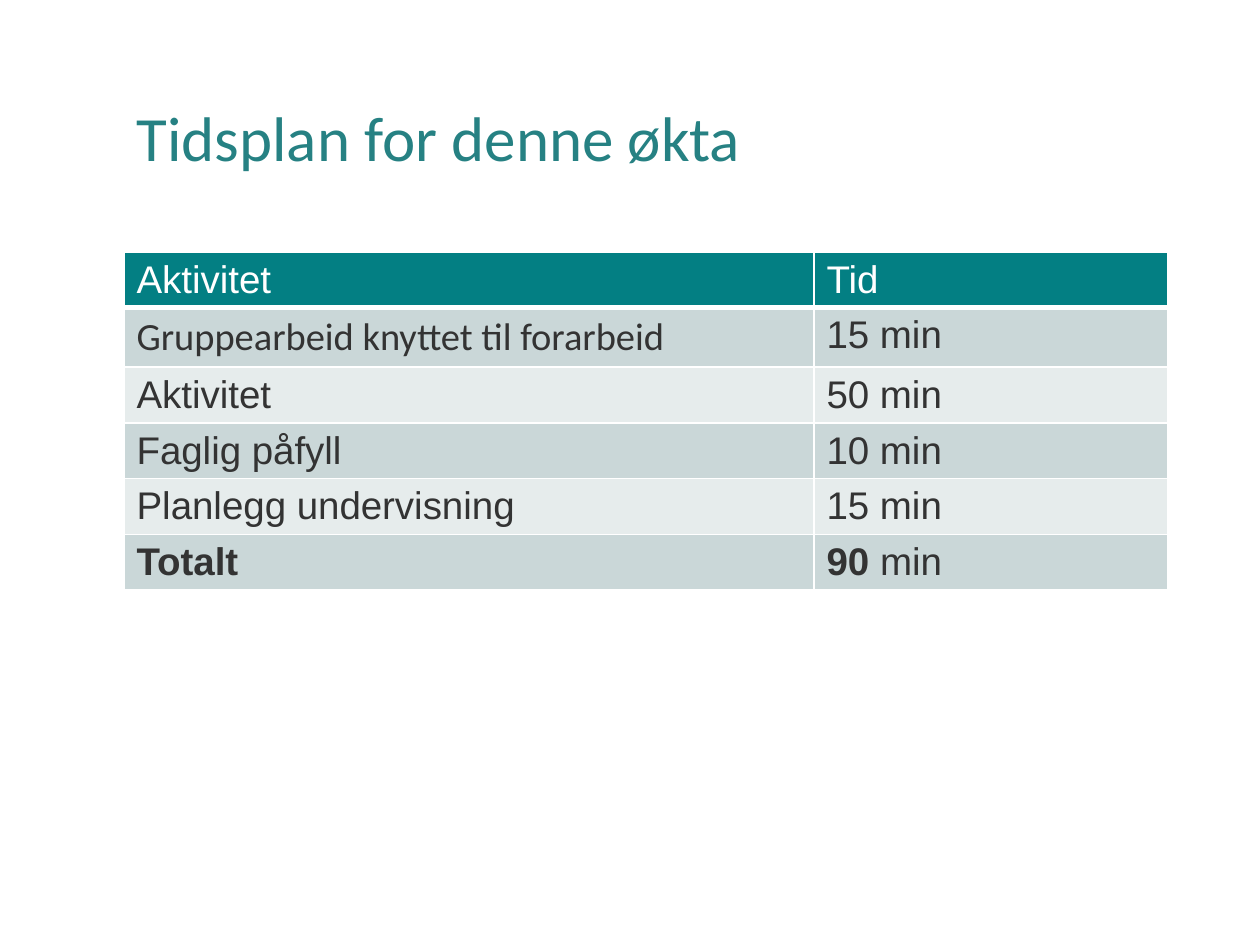
from pptx import Presentation
from pptx.dml.color import RGBColor
from pptx.enum.text import MSO_ANCHOR, PP_ALIGN
from pptx.oxml import parse_xml
from pptx.oxml.ns import nsdecls
from pptx.util import Pt

EMU_PER_PX = 914400 // 126
COLORS = {
    "title": "268183",
    "header": "037F83",
    "odd_row": "CAD7D8",
    "even_row": "E6ECEC",
    "text": "333333",
    "white": "FFFFFF",
}
HEADER = ("Aktivitet", "Tid")
SCHEDULE = [
    ("Gruppearbeid knyttet til forarbeid", "15 min"),
    ("Aktivitet", "50 min"),
    ("Faglig påfyll", "10 min"),
    ("Planlegg undervisning", "15 min"),
]
TOTAL = ("Totalt", "90", " min")
COLUMN_WIDTHS = (690, 354)
ROW_HEIGHT = 52


def px(length):
    return length * EMU_PER_PX


class SlideBuilder:
    def __init__(self, presentation):
        self.slide = presentation.slides.add_slide(presentation.slide_layouts[5])

    def add_run(self, paragraph, text, color, size=22, name="Arial", bold=False):
        run = paragraph.add_run()
        run.text = text
        formats = {"size": Pt(size), "name": name, "bold": bold}
        for attribute, value in formats.items():
            setattr(run.font, attribute, value)
        run.font.color.rgb = RGBColor.from_string(COLORS[color])

    def add_title(self, text, left, top, width, height):
        title = self.slide.shapes.title
        box = {"left": left, "top": top, "width": width, "height": height}
        for attribute, value in box.items():
            setattr(title, attribute, px(value))
        title.text_frame.vertical_anchor = MSO_ANCHOR.MIDDLE
        title.text_frame.word_wrap = True
        paragraph = title.text_frame.paragraphs[0]
        paragraph.alignment = PP_ALIGN.LEFT
        paragraph.line_spacing = 0.9
        self.add_run(paragraph, text, "title", size=36, name="Calibri")

    def add_table(self, rows, columns, left, top):
        frame = self.slide.shapes.add_table(
            rows, columns, px(left), px(top),
            px(sum(COLUMN_WIDTHS)), px(rows * ROW_HEIGHT),
        )
        for column, width in zip(frame.table.columns, COLUMN_WIDTHS):
            column.width = px(width)
        return frame.table

    def style_cell(self, cell, fill, top=1, bottom=1):
        """Give the cell white borders, with widths in points, and a fill."""
        properties = cell._tc.get_or_add_tcPr()
        for side, width in {"L": 1, "R": 1, "T": top, "B": bottom}.items():
            properties.append(parse_xml(
                f'<a:ln{side} {nsdecls("a")} w="{Pt(width)}"><a:solidFill>'
                f'<a:srgbClr val="{COLORS["white"]}"/></a:solidFill></a:ln{side}>'
            ))
        cell.fill.solid()
        cell.fill.fore_color.rgb = RGBColor.from_string(COLORS[fill])

    def add_schedule(self, left, top):
        rows = [HEADER, *SCHEDULE, TOTAL]
        table = self.add_table(len(rows), len(HEADER), left, top)
        for row, (activity, time, *unit) in enumerate(rows):
            fill = "odd_row" if row % 2 else "even_row"
            color = "text"
            if row == 0:
                fill, color = "header", "white"
            for column, text in enumerate((activity, time)):
                cell = table.cell(row, column)
                self.style_cell(cell, fill, top=3 if row == 1 else 1,
                                bottom=3 if row == 0 else 1)
                name = "Calibri" if (row, column) == (1, 0) else "Arial"
                self.add_run(cell.text_frame.paragraphs[0], text, color,
                             name=name, bold=bool(unit))
            for text in unit:
                self.add_run(cell.text_frame.paragraphs[0], text, color)


def main():
    presentation = Presentation()
    presentation.slide_width = px(1260)
    presentation.slide_height = px(945)
    builder = SlideBuilder(presentation)
    builder.add_title("Tidsplan for denne økta", 124, 50, 1044, 183)
    builder.add_schedule(124, 252)
    presentation.save("out.pptx")


if __name__ == "__main__":
    main()
